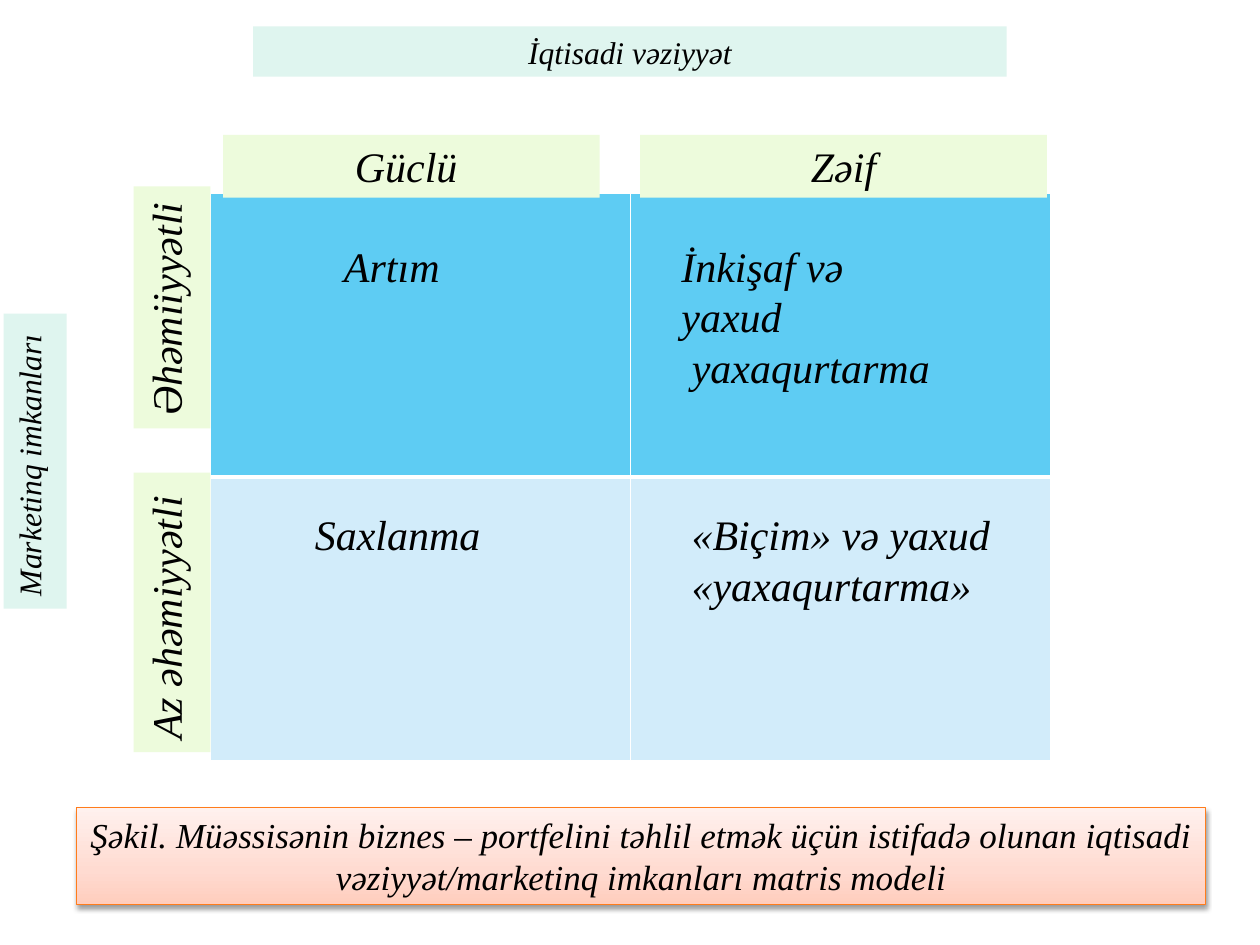
from lxml.etree import SubElement
from pptx import Presentation
from pptx.dml.color import RGBColor
from pptx.enum.shapes import MSO_SHAPE
from pptx.enum.text import MSO_ANCHOR, MSO_AUTO_SIZE, PP_ALIGN
from pptx.oxml import parse_xml
from pptx.oxml.ns import nsdecls, qn
from pptx.util import Emu, Pt

SCALE = 9144  # EMU per px, 100 px to the inch


def px(*lengths):
    return [Emu(length * SCALE) for length in lengths]


def color(hex_string):
    return RGBColor.from_string(hex_string)


def write(shape, text, size=24, align=PP_ALIGN.LEFT, font="Times New Roman",
          ink="000000", vertical=False):
    frame = shape.text_frame
    frame.word_wrap = True
    frame.auto_size = MSO_AUTO_SIZE.SHAPE_TO_FIT_TEXT
    frame.vertical_anchor = MSO_ANCHOR.TOP
    if vertical:
        frame._txBody.bodyPr.set("vert", "vert270")
    paragraph = frame.paragraphs[0]
    paragraph.text = text
    paragraph.alignment = align
    for run in paragraph.runs:
        run.font.name = font
        run.font.size = Pt(size)
        run.font.italic = True
        run.font.color.rgb = color(ink)


class MatrixSlide:
    AXIS = "DFF5EF"
    LEVEL = "EDFBDC"
    ROWS = ("5ECCF3", "D2ECFA")
    GRID = "FFFFFF"
    CAPTION_LINE = "FF7C1B"
    CAPTION_STOPS = ((0, "FFCDBD"), (35, "FFDBD1"), (100, "FFF1EE"))

    def __init__(self, slide):
        self.slide = slide

    def border(self, cell, side, width):
        line = SubElement(cell._tc.get_or_add_tcPr(), qn(f"a:{side}"), w=str(Pt(width)))
        fill = SubElement(line, qn("a:solidFill"))
        SubElement(fill, qn("a:srgbClr"), val=self.GRID)

    def matrix(self, *box):
        table = self.slide.shapes.add_table(2, 2, *px(*box)).table
        for row, fill in enumerate(self.ROWS):
            for cell in table.rows[row].cells:
                for side in ("lnL", "lnR", "lnT", "lnB"):
                    middle = side == ("lnB", "lnT")[row]
                    self.border(cell, side, 3 if middle else 1)
                cell.fill.solid()
                cell.fill.fore_color.rgb = color(fill)

    def panel(self, box, text, fill, **style):
        shape = self.slide.shapes.add_shape(MSO_SHAPE.RECTANGLE, *px(*box))
        shape.shadow.inherit = False
        shape.fill.solid()
        shape.fill.fore_color.rgb = color(fill)
        shape.line.fill.background()
        write(shape, text, **style)
        return shape

    def label(self, box, text, **style):
        write(self.slide.shapes.add_textbox(*px(*box)), text, **style)

    def caption(self, box, text, **style):
        shape = self.panel(box, text, self.CAPTION_STOPS[0][1], **style)
        shape.line.color.rgb = color(self.CAPTION_LINE)
        shape.line.width = Pt(0.75)
        properties = shape._element.spPr
        # Gradient from the bottom edge up
        stops = "".join(
            f'<a:gs pos="{place * 1000}"><a:srgbClr val="{tint}"/></a:gs>'
            for place, tint in self.CAPTION_STOPS)
        gradient = parse_xml(
            f'<a:gradFill {nsdecls("a")} rotWithShape="1"><a:gsLst>{stops}</a:gsLst>'
            '<a:lin ang="16200000" scaled="1"/></a:gradFill>')
        properties.replace(properties.find(qn("a:solidFill")), gradient)
        # Soft shadow below
        shadow = SubElement(properties.find(qn("a:effectLst")), qn("a:outerShdw"),
                            blurRad="40000", dist="20000", dir="5400000", rotWithShape="0")
        tint = SubElement(shadow, qn("a:srgbClr"), val="000000")
        SubElement(tint, qn("a:alpha"), val="38000")


def main():
    presentation = Presentation()
    presentation.slide_width, presentation.slide_height = px(1000, 750)
    page = MatrixSlide(presentation.slides.add_slide(presentation.slide_layouts[6]))
    center = PP_ALIGN.CENTER

    # Two by two matrix
    page.matrix(167, 153, 667, 451)

    # Horizontal axis and its levels
    page.panel((201, 21, 598, 40), "İqtisadi vəziyyət", page.AXIS, size=18, align=center)
    page.panel((177, 107, 299, 50), "Güclü ", page.LEVEL, align=center)
    page.panel((508, 107, 323, 50), "Zəif", page.LEVEL, align=center)

    # Vertical axis and its levels
    page.panel((3, 249, 50, 234), "Marketinq imkanları", page.AXIS, size=18, vertical=True)
    page.panel((106, 148, 61, 192), "Əhəmiiyyətli", page.LEVEL, vertical=True)
    page.panel((106, 375, 61, 222), "Az əhəmiyyətli", page.LEVEL, vertical=True)

    # Strategy in each quadrant
    page.label((201, 186, 220, 50), "Artım", align=center)
    page.label((531, 186, 236, 131), "İnkişaf və yaxud\n yaxaqurtarma")
    page.label((539, 399, 260, 91), "«Biçim» və yaxud «yaxaqurtarma»")
    page.label((240, 399, 157, 50), "Saxlanma")

    # Caption
    page.caption((61, 641, 896, 77),
                 "Şəkil. Müəssisənin biznes – portfelini təhlil etmək üçün istifadə olunan "
                 "iqtisadi vəziyyət/marketinq imkanları matris modeli",
                 size=20, align=center)

    presentation.save("out.pptx")


if __name__ == "__main__":
    main()
